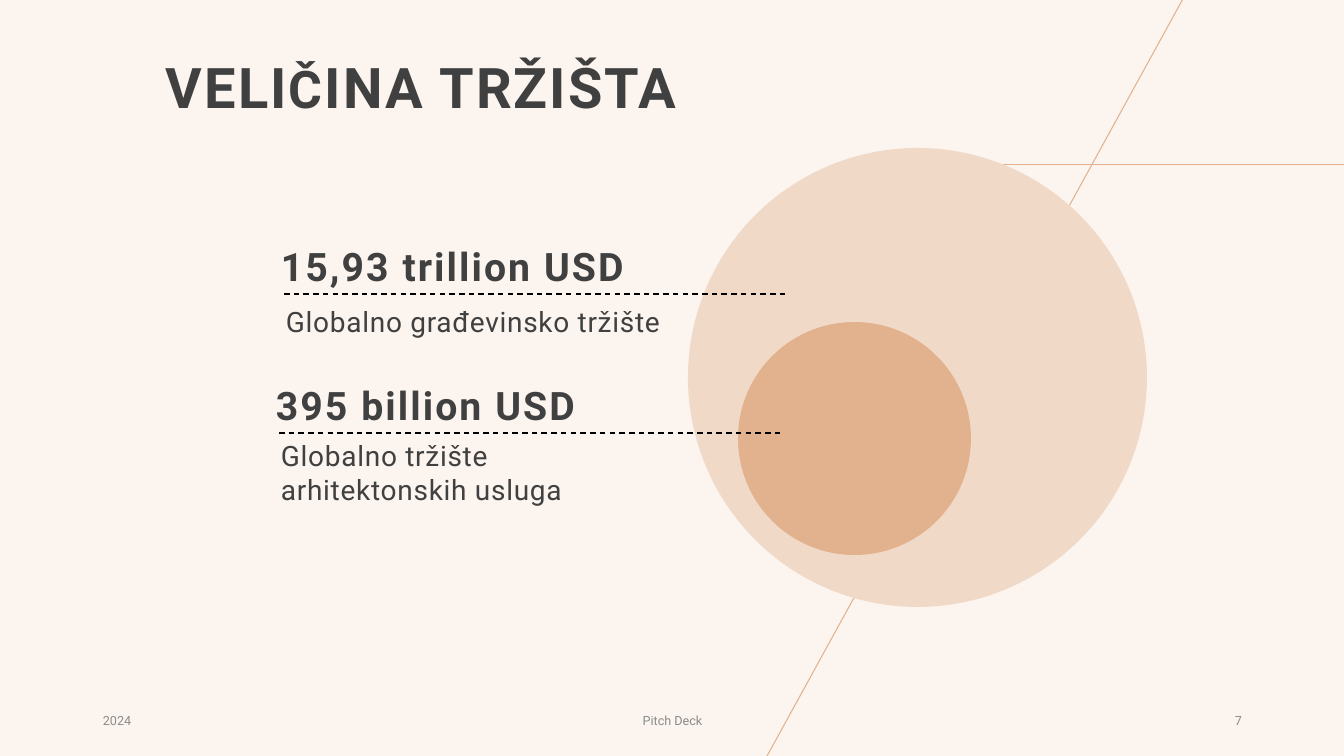
import pptx
import pptx.util
import pptx.dml.color
import pptx.enum.dml
import pptx.enum.shapes
import pptx.enum.text
import pptx.oxml.ns
import lxml.etree

RGB = pptx.dml.color.RGBColor
CREAM = RGB(0xFB, 0xF4, 0xEF)
SAND = RGB(0xF1, 0xD9, 0xC8)
CLAY = RGB(0xE2, 0xB1, 0x8D)
DARK = RGB(0x40, 0x40, 0x40)
GREY = RGB(0x8B, 0x8B, 0x8B)
BLACK = RGB(0, 0, 0)

ALIGN = pptx.enum.text.PP_ALIGN
ANCHOR = pptx.enum.text.MSO_ANCHOR
DASH = pptx.enum.dml.MSO_LINE.DASH
WIDTH, HEIGHT = 1344, 756


def px(n):
    return pptx.util.Emu(round(n * 914400 / 100.8))


def add_text(slide, box, runs, color=DARK, bold=False, track=0, align=ALIGN.LEFT,
             anchor=ANCHOR.TOP, lead=None, before=None):
    """Add a text box; runs is a list of (text, size in points)."""
    frame = slide.shapes.add_textbox(*map(px, box)).text_frame
    frame.word_wrap = True
    frame.vertical_anchor = anchor
    para = frame.paragraphs[0]
    para.alignment = align
    if lead:
        para.line_spacing = lead
    if before:
        para.space_before = pptx.util.Pt(before)
    for words, size in runs:
        run = para.add_run()
        run.text = words
        font = run.font
        font.name, font.size, font.bold = "Roboto", pptx.util.Pt(size), bold
        font.color.rgb = color
        if track:
            run._r.get_or_add_rPr().set("spc", str(round(track * 100)))


def add_head(slide, box, runs):
    add_text(slide, box, runs, bold=True, track=1.5, anchor=ANCHOR.BOTTOM, lead=0.9)


def add_line(slide, start, end, color, width, dash=None):
    line = slide.shapes.add_connector(
        pptx.enum.shapes.MSO_CONNECTOR.STRAIGHT, *map(px, start + end))
    line.line.color.rgb = color
    line.line.width = pptx.util.Pt(width)
    if dash:
        line.line.dash_style = dash
    lxml.etree.SubElement(line._element.spPr, pptx.oxml.ns.qn("a:effectLst"))


def add_disc(slide, left, top, size, color):
    disc = slide.shapes.add_shape(
        pptx.enum.shapes.MSO_SHAPE.OVAL, *map(px, (left, top, size, size)))
    disc.shadow.inherit = False
    disc.fill.solid()
    disc.fill.fore_color.rgb = color
    disc.line.fill.background()


def add_decor(slide, box):
    left, top, wide, high = box
    add_line(slide, (left + 1003, top + 165), (left + wide, top + 165), CLAY, 0.75)
    add_line(slide, (left + 1184, top - 3), (left + 766, top + high + 2), CLAY, 0.75)


def add_footer(slide, box):
    left, top, wide, high = box
    parts = [("2024", 0, 302, ALIGN.LEFT),
             ("Pitch Deck", 483, 193, ALIGN.CENTER),
             ("7", wide - 302, 302, ALIGN.RIGHT)]
    for words, shift, span, align in parts:
        add_text(slide, (left + shift, top, span, high), [(words, 9)],
                 color=GREY, align=align, anchor=ANCHOR.MIDDLE)


def add_discs(slide, box):
    left, top, size = box
    add_disc(slide, left, top, size, SAND)
    add_disc(slide, left + 50, top + 174, 233, CLAY)


def add_market(slide, box, value, label, note):
    """Figure above a dashed rule; note gives the label's shift and size."""
    left, top, wide, high = box
    add_head(slide, (left, top, wide, high), [(value, 28)])
    rule = top + high - 1
    add_line(slide, (left + 13, rule), (left + 517, rule), BLACK, 1, DASH)
    shift, drop, span, tall = note
    add_text(slide, (left + shift, rule + drop, span, tall), [(label, 20)],
             track=0.5, before=10)


def build_slide(deck):
    slide = deck.slides.add_slide(deck.slide_layouts[6])
    slide.background.fill.solid()
    slide.background.fill.fore_color.rgb = CREAM

    # Background lines and footer
    add_decor(slide, (0, 0, WIDTH, HEIGHT))
    add_footer(slide, (93, 701, 1159, 40))

    # Heading
    add_head(slide, (156, -20, 626, 146),
             [("VELI", 40), ("Č", 37), ("INA TRŽIŠTA", 40)])

    # Nested markets
    add_discs(slide, (688, 148, 459))
    add_market(slide, (271, 162, 563, 133), "15,93 trillion USD",
               "Globalno građevinsko tržište", (5, 6, 563, 60))
    add_market(slide, (266, 301, 563, 133), "395 billion USD",
               "Globalno tržište arhitektonskih usluga", (5, 1, 385, 168))


def main():
    deck = pptx.Presentation()
    deck.slide_width, deck.slide_height = px(WIDTH), px(HEIGHT)
    build_slide(deck)
    deck.save("out.pptx")


if __name__ == "__main__":
    main()
